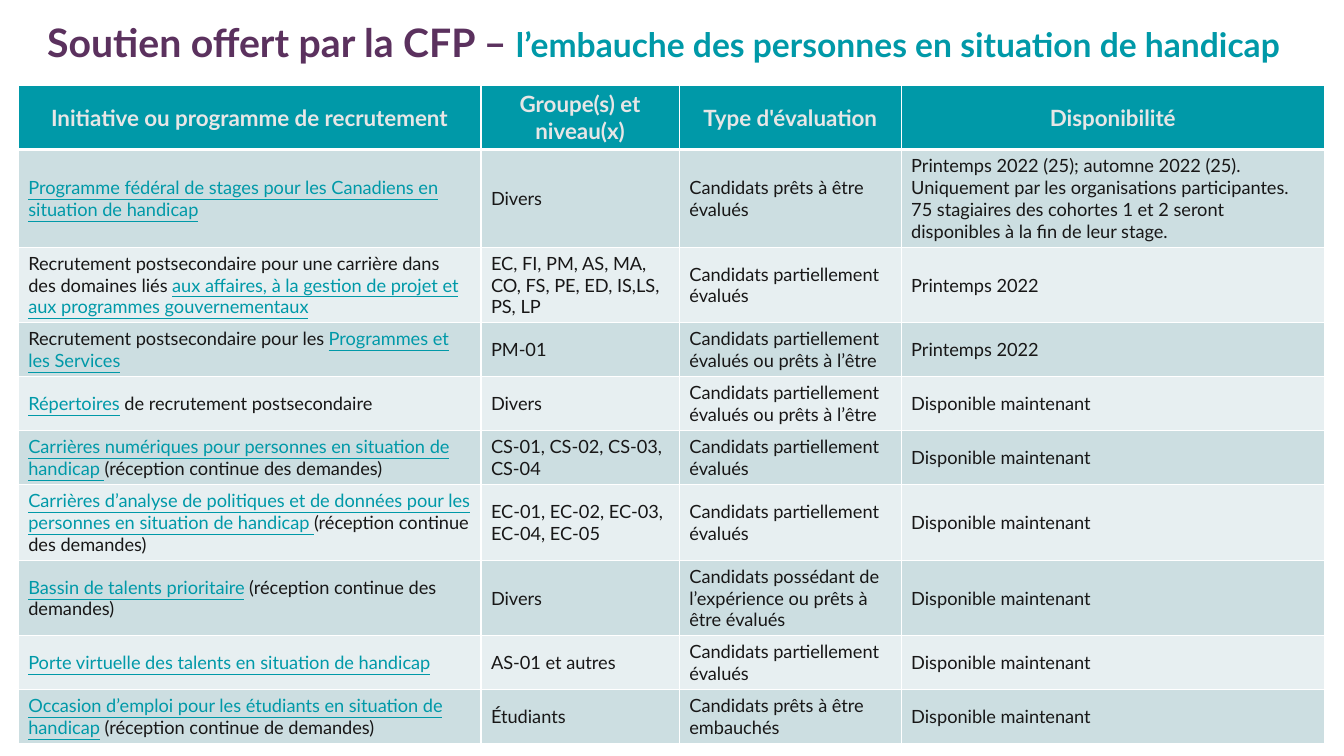
import pptx
import pptx.util
import pptx.dml.color
import pptx.enum.text
import lxml.etree
from dataclasses import dataclass

Cm, Pt = pptx.util.Cm, pptx.util.Pt
ALIGN, ANCHOR = pptx.enum.text.PP_ALIGN, pptx.enum.text.MSO_ANCHOR


@dataclass
class Theme:
    font: str = "Lato"
    plum: str = "5B315E"
    teal: str = "0099A8"
    ink: str = "181717"
    pale: str = "E7E6E6"
    rule: str = "FFFFFF"
    bands: tuple = ("CCDEE1", "E7EFF1")
    title: int = 28
    sub: int = 24
    head: int = 16
    body: int = 13


theme = Theme()

TITLE = "Soutien offert par la CFP – "
SUB = "l’embauche des personnes en situation de handicap"

HEADS = ["Initiative ou programme de recrutement", "Groupe(s) et niveau(x)",
         "Type d'évaluation", "Disponibilité"]

PART = "Candidats partiellement évalués"
MIXED = "Candidats partiellement évalués ou prêts à l’être"
NOW = "Disponible maintenant"
SPRING = "Printemps 2022"

# Bars enclose the link-styled words; a line break starts a new paragraph.
ROWS = [
    ("|Programme fédéral de stages pour les Canadiens en situation de handicap|",
     "Divers", "Candidats prêts à être évalués",
     "Printemps 2022 (25); automne 2022 (25). "
     "Uniquement par les organisations participantes.\n"
     "75 stagiaires des cohortes 1 et 2 seront disponibles à la fin de leur stage."),
    ("Recrutement postsecondaire pour une carrière dans des domaines liés "
     "|aux affaires, à la gestion de projet et aux programmes gouvernementaux|",
     "EC, FI, PM, AS, MA, CO, FS, PE, ED, IS,LS, PS, LP", PART, SPRING),
    ("Recrutement postsecondaire pour les |Programmes et les Services|",
     "PM-01", MIXED, SPRING),
    ("|Répertoires| de recrutement postsecondaire", "Divers", MIXED, NOW),
    ("|Carrières numériques pour personnes en situation de handicap |"
     "(réception continue des demandes)",
     "CS-01, CS-02, CS-03, CS-04", PART, NOW),
    ("|Carrières d’analyse de politiques et de données pour les personnes "
     "en situation de handicap |(réception continue des demandes)",
     "EC-01, EC-02, EC-03, EC-04, EC-05", PART, NOW),
    ("|Bassin de talents prioritaire| (réception continue des demandes)",
     "Divers", "Candidats possédant de l’expérience ou prêts à être évalués", NOW),
    ("|Porte virtuelle des talents en situation de handicap|",
     "AS-01 et autres", PART, NOW),
    ("|Occasion d’emploi pour les étudiants en situation de handicap| "
     "(réception continue de demandes)",
     "Étudiants", "Candidats prêts à être embauchés", NOW),
]

WIDTHS = [11.66, 5, 5.59, 10.67]
HEIGHT = 1.3


def rgb(code):
    return pptx.dml.color.RGBColor.from_string(code)


def add_run(para, text, size, color, bold=False, under=False):
    run = para.add_run()
    run.text = text
    font = run.font
    font.name, font.size = theme.font, Pt(size)
    font.bold, font.underline = bold, under
    font.color.rgb = rgb(color)


def add_edges(cell, head):
    """Draw the cell borders, with a heavier rule below the header."""
    props = cell._tc.get_or_add_tcPr()
    space = props.nsmap["a"]
    for spot, tag in enumerate(("lnL", "lnR", "lnT", "lnB")):
        width = 3 if head and tag == "lnB" else 1
        line = lxml.etree.Element(f"{{{space}}}{tag}", w=str(Pt(width)))
        fill = lxml.etree.SubElement(line, f"{{{space}}}solidFill")
        lxml.etree.SubElement(fill, f"{{{space}}}srgbClr", val=theme.rule)
        props.insert(spot, line)


def fill_cell(cell, text, row):
    head = row == 0
    cell.vertical_anchor = ANCHOR.MIDDLE
    cell.fill.solid()
    cell.fill.fore_color.rgb = rgb(theme.teal if head else theme.bands[(row - 1) % 2])
    add_edges(cell, head)
    frame = cell.text_frame
    for num, line in enumerate(text.split("\n")):
        para = frame.add_paragraph() if num else frame.paragraphs[0]
        if head:
            para.alignment = ALIGN.CENTER
            add_run(para, line, theme.head, theme.pale, bold=True)
            continue
        for turn, words in enumerate(line.split("|")):
            link = turn % 2 == 1
            if words:
                add_run(para, words, theme.body,
                        theme.teal if link else theme.ink, under=link)


def add_title(slide):
    frame = slide.shapes.add_textbox(Cm(0.94), Cm(-0.05), Cm(31.6), Cm(2.36)).text_frame
    frame.word_wrap = True
    frame.vertical_anchor = ANCHOR.MIDDLE
    para = frame.paragraphs[0]
    para.line_spacing = 0.9
    add_run(para, TITLE, theme.title, theme.plum, bold=True)
    add_run(para, SUB, theme.sub, theme.teal, bold=True)


def add_grid(slide):
    lines = [HEADS] + ROWS
    table = slide.shapes.add_table(
        len(lines), len(WIDTHS), Cm(0.46), Cm(2.16),
        Cm(sum(WIDTHS)), Cm(HEIGHT * len(lines))).table
    for col, width in zip(table.columns, WIDTHS):
        col.width = Cm(width)
    for row, line in enumerate(lines):
        for col, text in enumerate(line):
            fill_cell(table.cell(row, col), text, row)


def main():
    deck = pptx.Presentation()
    deck.slide_width, deck.slide_height = Cm(33.87), Cm(19.05)
    slide = deck.slides.add_slide(deck.slide_layouts[6])
    add_title(slide)
    add_grid(slide)
    deck.save("out.pptx")


if __name__ == "__main__":
    main()
